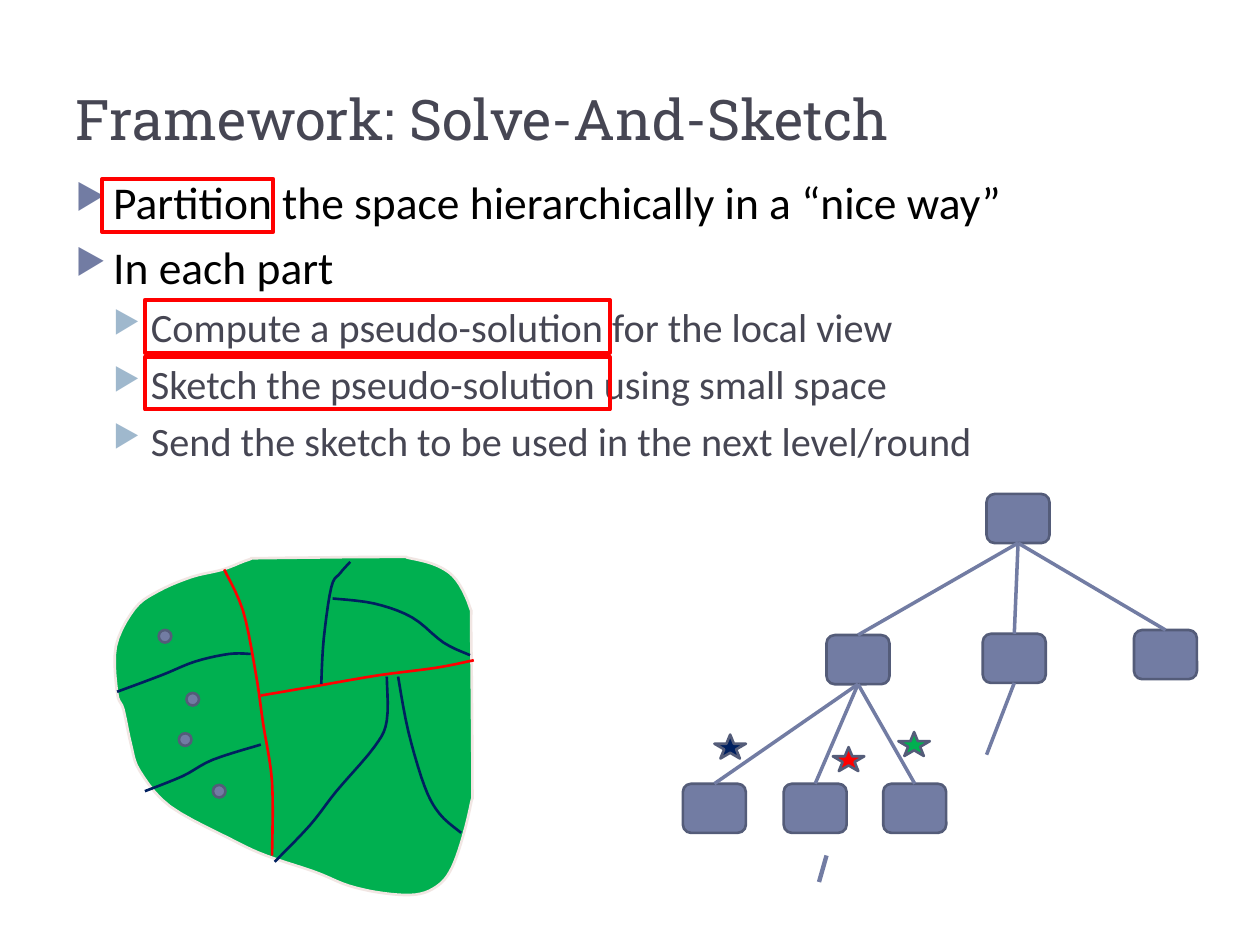
from dataclasses import dataclass
from typing import NamedTuple, Optional

from lxml import etree
from pptx import Presentation
from pptx.dml.color import RGBColor
from pptx.enum.shapes import MSO_CONNECTOR, MSO_SHAPE
from pptx.enum.text import MSO_ANCHOR
from pptx.oxml.ns import qn
from pptx.util import Inches, Pt

STRAIGHT = MSO_CONNECTOR.STRAIGHT
ROUNDED = MSO_SHAPE.ROUNDED_RECTANGLE
RECTANGLE = MSO_SHAPE.RECTANGLE
OVAL = MSO_SHAPE.OVAL
STAR = MSO_SHAPE.STAR_5_POINT
BOTTOM = MSO_ANCHOR.BOTTOM
TOP_SIDE, BOTTOM_SIDE = 0, 2
CURVE_STEPS = 5


@dataclass(frozen=True)
class Theme:
    title_font: str = "Roboto Slab"
    body_font: str = "Calibri"
    title_size: float = 32
    title: str = "464653"
    accent: str = "727CA3"
    accent_edge: str = "545C79"
    red: str = "FF0000"
    navy: str = "002060"
    green: str = "00B050"
    border: str = "F1E6E3"
    outline: float = 1.5
    edge: float = 2
    frame: float = 2.25
    stub: float = 2.5


@dataclass(frozen=True)
class BulletLevel:
    depth: int
    size: float
    spacing: float
    color: str
    bullet_color: str


class Bullet(NamedTuple):
    text: str
    level: BulletLevel


class Point(NamedTuple):
    x: float
    y: float


class Box(NamedTuple):
    left: float
    top: float
    width: float
    height: float


class Cut(NamedTuple):
    color: str
    waypoints: list


class Star(NamedTuple):
    corner: Point
    color: str


THEME = Theme()
MAIN = BulletLevel(0, 26, 6, "000000", "727CA3")
SUB = BulletLevel(1, 23, 5, "464653", "9FB8CD")
BULLETS = [
    Bullet("Partition the space hierarchically in a “nice way”", MAIN),
    Bullet("In each part", MAIN),
    Bullet("Compute a pseudo-solution for the local view", SUB),
    Bullet("Sketch the pseudo-solution using small space", SUB),
    Bullet("Send the sketch to be used in the next level/round", SUB),
]
PHRASE_FRAMES = [Box(0.81, 1.42, 1.36, 0.42), Box(1.15, 2.38, 3.69, 0.42), Box(1.15, 2.83, 3.69, 0.42)]

WEST_SIDE = [(1.35, 6.4), (1.11, 6.12), (1.04, 5.91), (0.98, 5.63), (0.93, 5.5), (0.92, 5.13)]
NORTH_SIDE = [(1.07, 4.83), (1.26, 4.69), (1.52, 4.58), (1.77, 4.52), (1.98, 4.44), (2.1, 4.43),
              (3.1, 4.42), (3.25, 4.43)]
EAST_SIDE = [(3.47, 4.49), (3.62, 4.6), (3.73, 4.82), (3.74, 5), (3.75, 6.2), (3.74, 6.37)]
SOUTH_SIDE = [(3.66, 6.69), (3.57, 6.92), (3.46, 7.04), (3.3, 7.1), (3.05, 7.09), (2.77, 7.03),
              (2.5, 6.92), (2.11, 6.79), (1.83, 6.66)]
REGION = WEST_SIDE + NORTH_SIDE + EAST_SIDE + SOUTH_SIDE
CUTS = {
    "north to south": Cut(THEME.red, [
        (1.78, 4.52), (1.93, 4.85), (2.03, 5.34), (2.09, 5.75), (2.16, 6.21), (2.16, 6.79)]),
    "center to east": Cut(THEME.red, [(2.07, 5.52), (2.48, 5.45), (3, 5.36), (3.46, 5.3), (3.76, 5.24)]),
    "lower west": Cut(THEME.navy, [(1.15, 6.28), (1.45, 6.16), (1.69, 6.03), (2.07, 5.91)]),
    "upper west": Cut(THEME.navy, [(0.93, 5.49), (1.28, 5.36), (1.55, 5.25), (1.82, 5.19), (1.99, 5.19)]),
    "north": Cut(THEME.navy, [(2.55, 5.43), (2.57, 5.07), (2.63, 4.66), (2.7, 4.55), (2.78, 4.46)]),
    "north east": Cut(THEME.navy, [(2.64, 4.75), (2.97, 4.79), (3.27, 4.9), (3.52, 5.1), (3.73, 5.2)]),
    "south": Cut(THEME.navy, [
        (2.18, 6.84), (2.46, 6.55), (2.67, 6.28), (2.97, 5.93), (3.07, 5.72), (3.07, 5.37)]),
    "south east": Cut(THEME.navy, [(3.16, 5.37), (3.24, 5.8), (3.37, 6.24), (3.49, 6.46), (3.66, 6.61)]),
}
DOTS = [Point(1.48, 5.5), Point(1.26, 5), Point(1.42, 5.82), Point(1.69, 6.23)]

NODE_WIDTH, NODE_HEIGHT = 0.5, 0.39
LEAF_TOP = 6.22
NODES = {
    "root": Point(7.83, 3.92),
    "left": Point(6.56, 5.04), "middle": Point(7.8, 5.03), "right": Point(9, 5),
    "leaf 1": Point(5.42, LEAF_TOP), "leaf 2": Point(6.22, LEAF_TOP), "leaf 3": Point(7.01, LEAF_TOP),
}
CHILDREN = {"root": ["left", "middle", "right"], "left": ["leaf 1", "leaf 2", "leaf 3"]}
MESSAGES = [Star(Point(5.67, 5.83), THEME.navy), Star(Point(7.13, 5.81), THEME.green),
            Star(Point(6.61, 5.93), THEME.red)]


def blend(before: float, start: float, end: float, after: float, t: float) -> float:
    return start + t / 2 * (
        end - before
        + t * (2 * before - 5 * start + 4 * end - after)
        + t * t * (3 * (start - end) + after - before))


def smooth(waypoints: list, closed: bool) -> list:
    first, last = waypoints[0], waypoints[-1]
    padded = [last, *waypoints, first, waypoints[1]] if closed else [first, *waypoints, last]
    curve = [Point(*first)]
    for window in zip(padded, padded[1:], padded[2:], padded[3:]):
        horizontal, vertical = zip(*window)
        for step in range(1, CURVE_STEPS + 1):
            t = step / CURVE_STEPS
            curve.append(Point(blend(*horizontal, t), blend(*vertical, t)))
    return curve


def style_shape(shape, fill: Optional[str], line: str, width: float) -> None:
    shape.shadow.inherit = False
    if fill:
        shape.fill.solid()
        shape.fill.fore_color.rgb = RGBColor.from_string(fill)
    else:
        shape.fill.background()
    shape.line.color.rgb = RGBColor.from_string(line)
    shape.line.width = Pt(width)


def add_preset(slide, kind, box: Box, fill: Optional[str],
               line: str = THEME.accent_edge, width: float = THEME.outline):
    shape = slide.shapes.add_shape(kind, *map(Inches, box))
    style_shape(shape, fill, line, width)
    return shape


def add_curve(slide, waypoints: list, line: str, fill: Optional[str] = None) -> None:
    closed = fill is not None
    start, *others = [(Inches(x), Inches(y)) for x, y in smooth(waypoints, closed)]
    builder = slide.shapes.build_freeform(*start)
    builder.add_line_segments(others, close=closed)
    style_shape(builder.convert_to_shape(), fill, line, THEME.outline)


def add_line(slide, start: Point, end: Point, width: float = THEME.edge):
    connector = slide.shapes.add_connector(STRAIGHT, *map(Inches, (*start, *end)))
    connector.line.color.rgb = RGBColor.from_string(THEME.accent)
    connector.line.width = Pt(width)
    etree.SubElement(connector._element.spPr, qn("a:effectLst"))
    return connector


def add_text_frame(slide, box: Box):
    text_frame = slide.shapes.add_textbox(*map(Inches, box)).text_frame
    text_frame.word_wrap = True
    return text_frame


def format_runs(paragraph, font: str, size: float, color: str) -> None:
    for run in paragraph.runs:
        run.font.name = font
        run.font.size = Pt(size)
        run.font.color.rgb = RGBColor.from_string(color)


def format_bullet(paragraph, level: BulletLevel) -> None:
    paragraph.level = level.depth
    paragraph.space_before = Pt(level.spacing)
    properties = paragraph._p.get_or_add_pPr()
    properties.set("marL", str(Inches(0.3 * (level.depth + 1))))
    properties.set("indent", str(Inches(-0.3)))
    color = etree.SubElement(properties, qn("a:buClr"))
    etree.SubElement(color, qn("a:srgbClr"), val=level.bullet_color)
    etree.SubElement(properties, qn("a:buSzPct"), val="76000")
    etree.SubElement(properties, qn("a:buChar"), char="▶")


def add_texts(slide) -> None:
    title = add_text_frame(slide, Box(0.5, 0.17, 9, 1.08))
    title.vertical_anchor = BOTTOM
    title.text = "Framework: Solve-And-Sketch"
    format_runs(title.paragraphs[0], THEME.title_font, THEME.title_size, THEME.title)
    body = add_text_frame(slide, Box(0.5, 1.33, 9, 5.4))
    body.text = "\n".join(bullet.text for bullet in BULLETS)
    for paragraph, (_, level) in zip(body.paragraphs, BULLETS):
        format_bullet(paragraph, level)
        format_runs(paragraph, THEME.body_font, level.size, level.color)


def add_map(slide) -> None:
    add_curve(slide, REGION, THEME.border, THEME.green)
    for cut in CUTS.values():
        add_curve(slide, cut.waypoints, cut.color)


def add_tree(slide) -> None:
    nodes = {name: add_preset(slide, ROUNDED, Box(*corner, NODE_WIDTH, NODE_HEIGHT), THEME.accent)
             for name, corner in NODES.items()}
    for parent, children in CHILDREN.items():
        for child in children:
            edge = add_line(slide, NODES[parent], NODES[child])
            edge.begin_connect(nodes[parent], BOTTOM_SIDE)
            edge.end_connect(nodes[child], TOP_SIDE)
    add_line(slide, Point(8.05, 5.42), Point(7.83, 5.99)).begin_connect(nodes["middle"], BOTTOM_SIDE)


def add_marks(slide) -> None:
    for frame in PHRASE_FRAMES:
        add_preset(slide, RECTANGLE, frame, None, THEME.red, THEME.frame)
    for corner in DOTS:
        add_preset(slide, OVAL, Box(*corner, 0.1, 0.1), THEME.accent)
    for star in MESSAGES:
        add_preset(slide, STAR, Box(*star.corner, 0.25, 0.19), star.color)
    add_line(slide, Point(6.56, 6.79), Point(6.5, 7), THEME.stub)


def main() -> None:
    presentation = Presentation()
    presentation.slide_width, presentation.slide_height = Inches(10), Inches(7.5)
    slide = presentation.slides.add_slide(presentation.slide_layouts[6])
    for add_part in (add_texts, add_map, add_tree, add_marks):
        add_part(slide)
    presentation.save("out.pptx")


if __name__ == "__main__":
    main()
